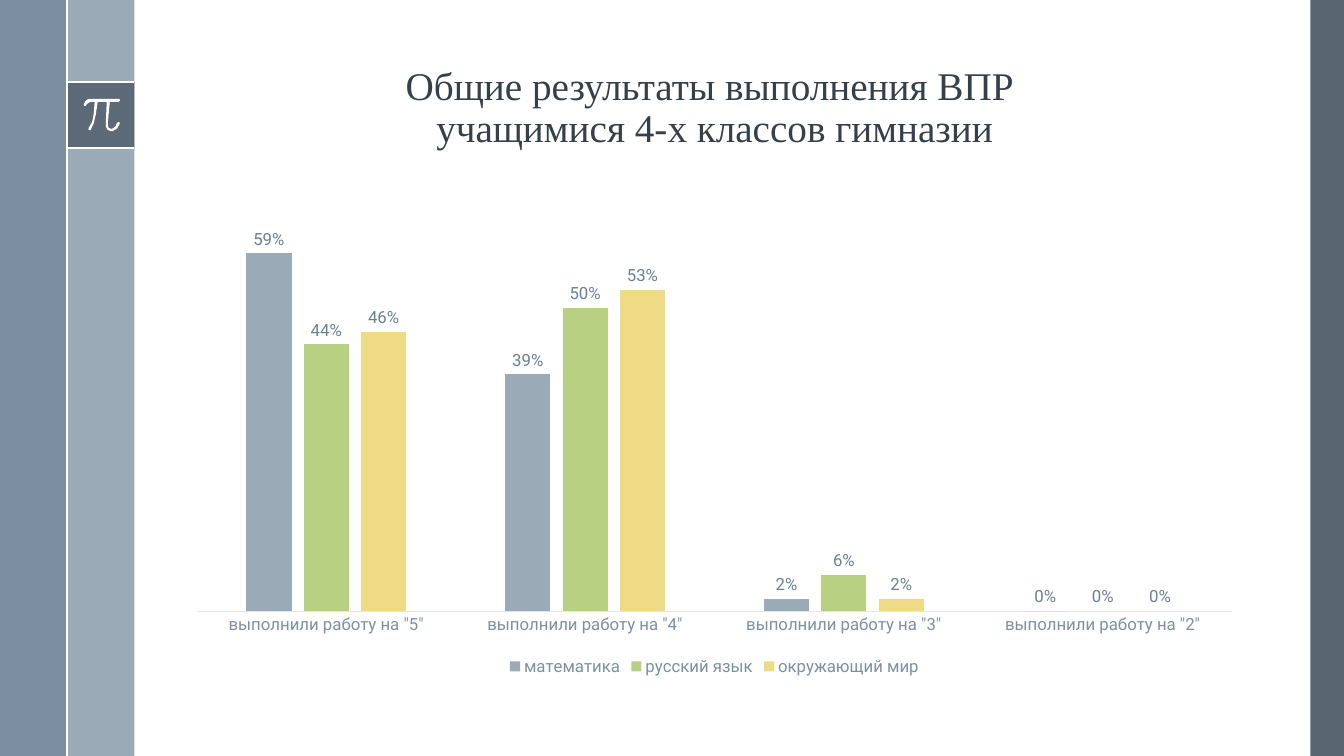
import pptx
import pptx.chart.data
import pptx.dml.color
import pptx.enum.chart
import pptx.enum.shapes
import pptx.enum.text
import pptx.oxml.ns
import pptx.util
from lxml import etree

PX = 9525  # EMU per px, 96 px to the inch
MILLI = 914.4  # EMU per thousandth of an inch
WIDTH, HEIGHT = 1280, 720
BAND = 64
BOX_TOP, BOX_BOTTOM = 78, 141

COLORS = {
    "white": "FFFFFF", "edge": "475562", "band": "9BAAB7", "side": "6A8093",
    "title": "35404A", "axis_text": "7D91A2", "axis_line": "E1E6EA",
    "label": "6A8094", "math": "9BAAB7", "russian": "B8D082", "world": "EFDB85",
}

TITLE = "Общие результаты выполнения ВПР \vучащимися 4-х классов гимназии"
GRADES = [f'выполнили работу на "{grade}"' for grade in (5, 4, 3, 2)]
SUBJECTS = [
    ("математика", "math", (0.59, 0.39, 0.02, 0)),
    ("русский язык", "russian", (0.44, 0.5, 0.06, 0)),
    ("окружающий мир", "world", (0.46, 0.53, 0.02, 0)),
]

# Outline of the pi sign, in thousandths of an inch
PI_SIGN = [
    (1180, 980), (900, 980), (868, 986), (846, 1006), (830, 1040),
    (838, 1050), (850, 1050), (864, 1030), (900, 1010), (940, 1010),
    (929, 1136), (915, 1210), (880, 1270), (878, 1285), (890, 1292),
    (900, 1290), (930, 1225), (950, 1142), (970, 1010), (1060, 1010),
    (1050, 1220), (1052, 1260), (1070, 1290), (1100, 1300), (1120, 1300),
    (1160, 1277), (1180, 1245), (1190, 1220), (1180, 1210), (1160, 1220),
    (1145, 1257), (1110, 1280), (1080, 1270), (1070, 1245), (1070, 1220),
    (1090, 1010), (1180, 1010), (1190, 1000), (1190, 990),
]


def px(*lengths):
    return [pptx.util.Emu(n * PX) for n in lengths]


def rgb(name):
    return pptx.dml.color.RGBColor.from_string(COLORS[name])


def paint(sp, color, alpha=100):
    sp.shadow.inherit = False
    sp.line.fill.background()
    sp.fill.solid()
    sp.fill.fore_color.rgb = rgb(color)
    if alpha < 100:
        clr = sp.fill._xPr.find(".//" + pptx.oxml.ns.qn("a:srgbClr"))
        etree.SubElement(clr, pptx.oxml.ns.qn("a:alpha"), val=str(alpha * 1000))


def add_rect(s, x, y, w, h, color, alpha=100):
    kind = pptx.enum.shapes.MSO_SHAPE.RECTANGLE
    paint(s.shapes.add_shape(kind, *px(x, y, w, h)), color, alpha)


def add_line(s, x1, y1, x2, y2):
    kind = pptx.enum.shapes.MSO_CONNECTOR.STRAIGHT
    line = s.shapes.add_connector(kind, *px(x1, y1, x2, y2))
    line.line.color.rgb = rgb("white")
    line.line.width = pptx.util.Pt(1.5)
    etree.SubElement(line._element.spPr, pptx.oxml.ns.qn("a:effectLst"))


def add_pi_sign(s):
    builder = s.shapes.build_freeform(*PI_SIGN[0], scale=MILLI)
    builder.add_line_segments(PI_SIGN[1:], close=True)
    paint(builder.convert_to_shape(), "white")


def set_title(s, x, y, w, h):
    sp = s.shapes.title
    sp.left, sp.top, sp.width, sp.height = px(x, y, w, h)
    tf = sp.text_frame
    tf.word_wrap = True
    tf.auto_size = pptx.enum.text.MSO_AUTO_SIZE.NONE
    tf.vertical_anchor = pptx.enum.text.MSO_ANCHOR.BOTTOM
    tf.text = TITLE
    p = tf.paragraphs[0]
    p.alignment = pptx.enum.text.PP_ALIGN.CENTER
    p.line_spacing = 0.9
    for r in p.runs:
        set_font(r.font, 28, "title", "Times New Roman")


def set_font(font, size, color, name="Roboto"):
    font.size = pptx.util.Pt(size)
    font.name = name
    font.bold = False
    font.color.rgb = rgb(color)


def add_results_chart(s, x, y, w, h):
    data = pptx.chart.data.CategoryChartData(number_format="0%")
    data.categories = GRADES
    for name, _, values in SUBJECTS:
        data.add_series(name, values)
    kind = pptx.enum.chart.XL_CHART_TYPE.COLUMN_CLUSTERED
    chart = s.shapes.add_chart(kind, *px(x, y, w, h), data).chart
    chart.has_title = False
    set_font(chart.font, 12, "axis_text")

    # Columns and their labels
    plot = chart.plots[0]
    plot.gap_width, plot.overlap = 219, -27
    plot.vary_by_categories = False
    for series, (_, color, _) in zip(plot.series, SUBJECTS):
        series.format.fill.solid()
        series.format.fill.fore_color.rgb = rgb(color)
        labels = series.data_labels
        labels.show_value = True
        labels.number_format = "0%"
        labels.number_format_is_linked = False
        labels.position = pptx.enum.chart.XL_LABEL_POSITION.OUTSIDE_END
        set_font(labels.font, 12, "label")

    # Axes
    axis = chart.category_axis
    axis.major_tick_mark = pptx.enum.chart.XL_TICK_MARK.NONE
    axis.format.line.color.rgb = rgb("axis_line")
    axis.format.line.width = pptx.util.Pt(0.75)
    set_font(axis.tick_labels.font, 12, "axis_text")
    scale = chart.value_axis
    scale.visible = False
    scale.has_major_gridlines = False
    scale.minimum_scale, scale.maximum_scale = 0, 0.7

    # Legend
    chart.has_legend = True
    chart.legend.position = pptx.enum.chart.XL_LEGEND_POSITION.BOTTOM
    chart.legend.include_in_layout = False
    set_font(chart.legend.font, 12, "axis_text")


def main():
    prs = pptx.Presentation()
    prs.slide_width, prs.slide_height = px(WIDTH, HEIGHT)
    s = prs.slides.add_slide(prs.slide_layouts[5])

    # Side bands
    add_rect(s, WIDTH - 32, 0, 32, HEIGHT, "edge", 90)
    add_rect(s, BAND, 0, BAND, HEIGHT, "band")
    add_rect(s, 0, 0, BAND, HEIGHT, "side", 88)

    # Box with the pi sign
    add_rect(s, BAND, BOX_TOP, BAND, BOX_BOTTOM - BOX_TOP, "edge", 75)
    for y in (BOX_TOP, BOX_BOTTOM):
        add_line(s, BAND, y, 2 * BAND, y)
    add_pi_sign(s)
    add_line(s, BAND, 0, BAND, HEIGHT)

    # Title and chart
    set_title(s, 167, 18, 1027, 131)
    add_results_chart(s, 167, 168, 1027, 480)

    prs.save("out.pptx")


if __name__ == "__main__":
    main()
